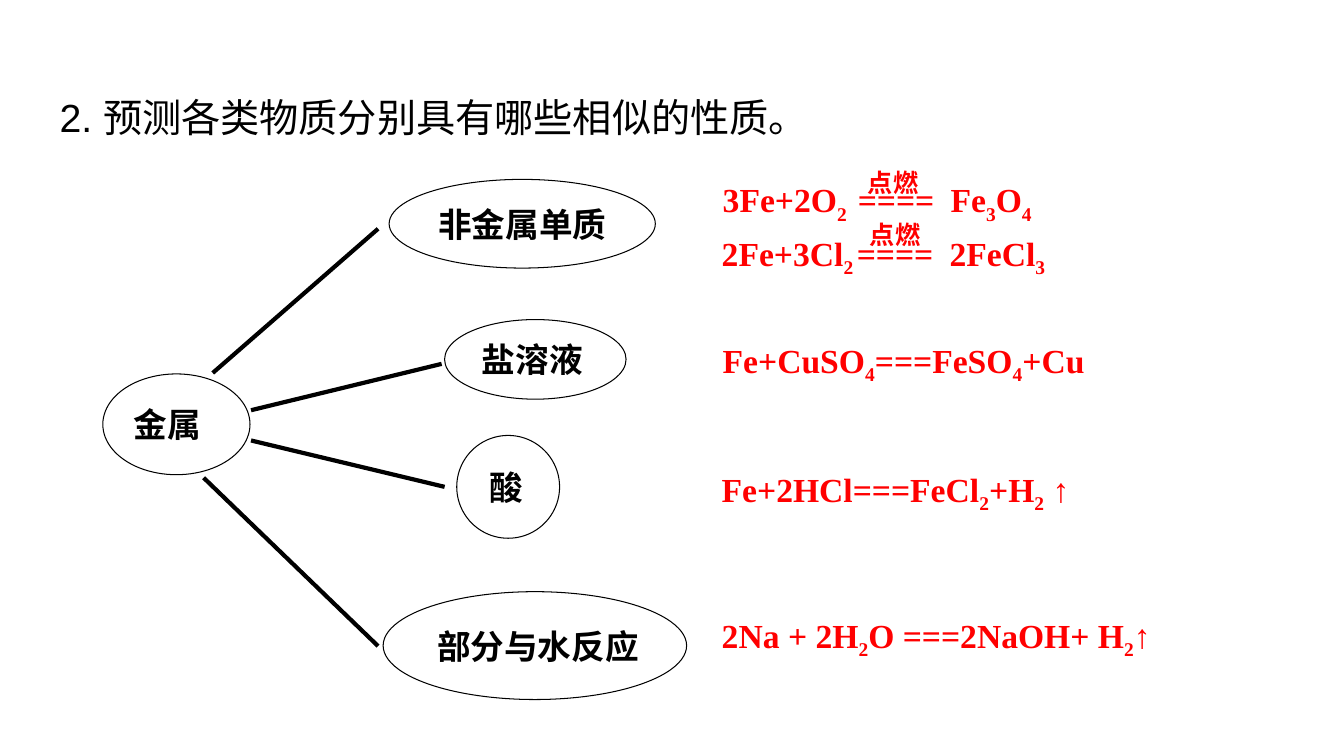
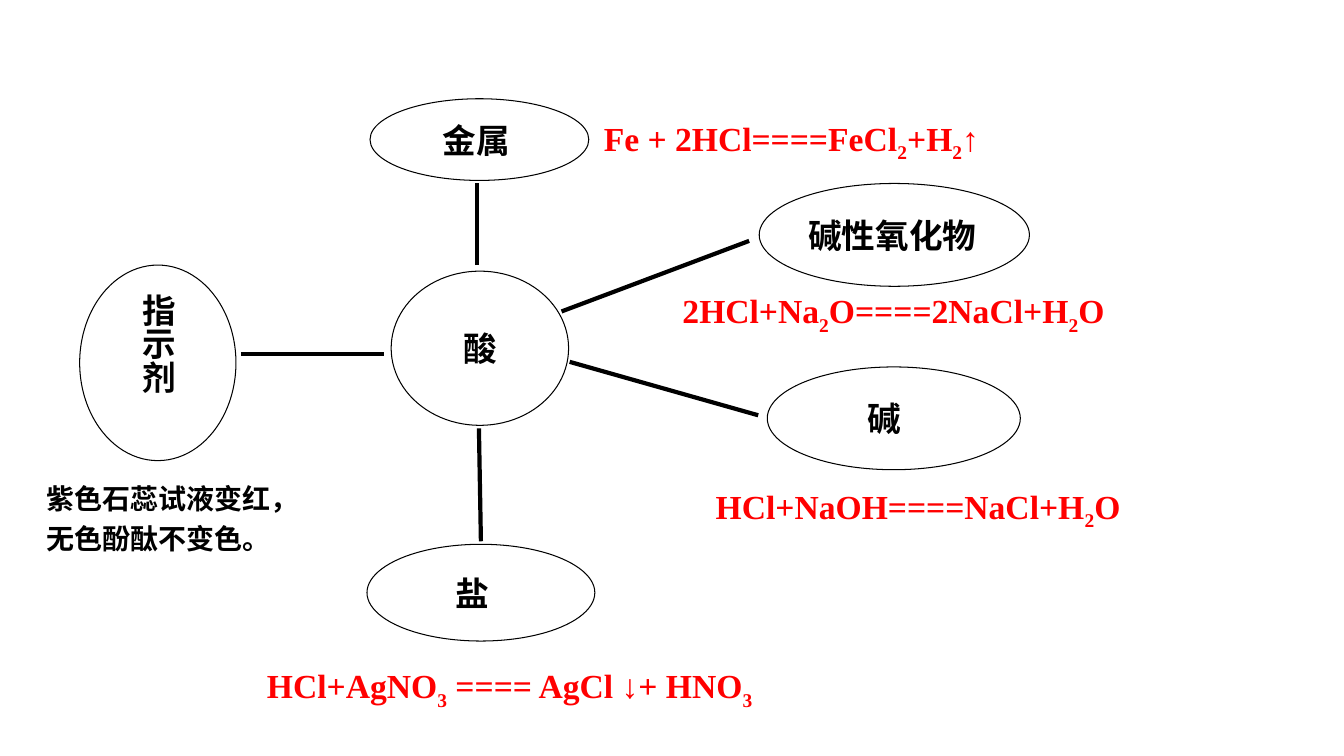
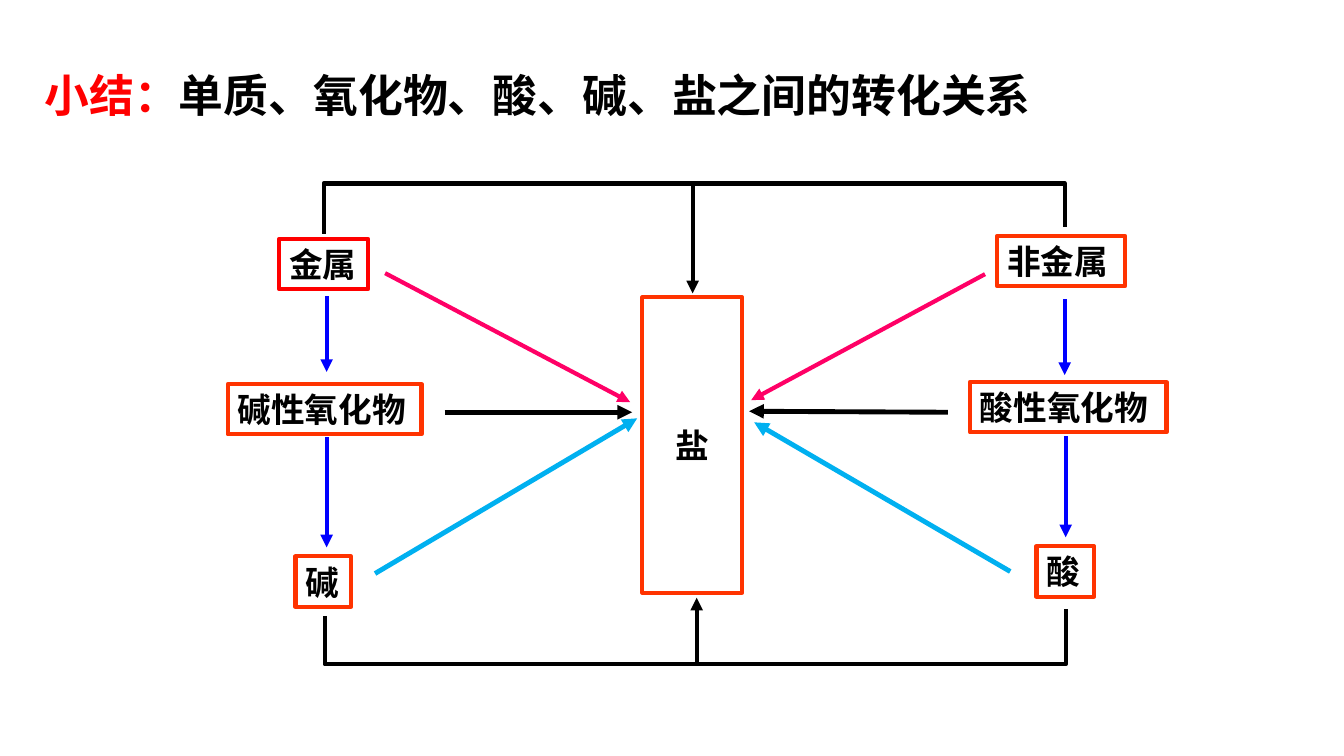
from lxml import etree
from pptx import Presentation
from pptx.dml.color import RGBColor
from pptx.enum import shapes, text
from pptx.oxml import ns
from pptx.util import Inches, Pt

COLORS = {
    "black": "000000",
    "red": "FF0000",
    "orange": "FF3300",
    "blue": "0000FF",
    "pink": "FF0066",
    "sky": "00B0F0",
}
SERIF, SANS, HEADING, CHINESE = "Times New Roman", "Calibri", "Arial", "Noto Sans CJK SC"
TITLE_ONLY, BLANK = 5, 6
REACTION_TABS = (1.34, 2.26)


def rgb(name):
    return RGBColor.from_string(COLORS[name])


def child(parent, tag, **attributes):
    return etree.SubElement(parent, ns.qn(tag), attributes)


def add_span(para, words, size=24, font=SERIF, color="black", bold=True, subscript=False):
    span = para.add_run()
    span.text = words
    span.font.size = Pt(size)
    span.font.bold = bold
    span.font.color.rgb = rgb(color)
    span.font.name = font
    properties = span.font._element
    child(properties, "a:ea", typeface=CHINESE)
    if subscript:
        properties.set("baseline", "-25000")


def set_margins(frame, left, top, right, bottom):
    frame.margin_left, frame.margin_top = Inches(left), Inches(top)
    frame.margin_right, frame.margin_bottom = Inches(right), Inches(bottom)


def place_title(slide, at, spans):
    box = slide.shapes.title
    box.left, box.top, box.width, box.height = map(Inches, at)
    frame = box.text_frame
    frame.auto_size = text.MSO_AUTO_SIZE.NONE
    frame.word_wrap = True
    frame.vertical_anchor = text.MSO_ANCHOR.MIDDLE
    set_margins(frame, 0.1, 0.05, 0.1, 0.05)
    para = frame.paragraphs[0]
    para.alignment = text.PP_ALIGN.LEFT
    for words, style in spans:
        add_span(para, words, **style)


def add_text(slide, left, top, width, height):
    frame = slide.shapes.add_textbox(*map(Inches, (left, top, width, height))).text_frame
    frame.word_wrap = True
    return frame


def add_equation(slide, left, top, width, formula, tabs=()):
    """Write a formula in which an underscore lowers the next character."""
    para = add_text(slide, left, top, width, 0.5).paragraphs[0]
    if tabs:
        stops = child(para._p.get_or_add_pPr(), "a:tabLst")
        for stop in tabs:
            child(stops, "a:tab", pos=str(Inches(stop)), algn="l")
    first, *rest = formula.split("_")
    add_span(para, first, color="red")
    for part in rest:
        add_span(para, part[0], color="red", subscript=True)
        if part[1:]:
            add_span(para, part[1:], color="red")


def add_node(slide, preset, at, line_color, line_width):
    node = slide.shapes.add_shape(preset, *map(Inches, at))
    node.shadow.inherit = False
    node.fill.background()
    node.line.color.rgb = rgb(line_color)
    node.line.width = Pt(line_width)
    node.text_frame.vertical_anchor = text.MSO_ANCHOR.MIDDLE
    return node


def add_oval(slide, at, words, shift=0, font=SERIF, vertical=False):
    """Draw a labelled oval; shift moves the label sideways from the centre."""
    node = add_node(slide, shapes.MSO_SHAPE.OVAL, at, "black", 0.75)
    frame = node.text_frame
    frame.word_wrap = True
    set_margins(frame, max(2 * shift, 0), 0, max(-2 * shift, 0), 0)
    if vertical:
        frame._txBody.bodyPr.set("vert", "eaVert")
    para = frame.paragraphs[0]
    para.alignment = text.PP_ALIGN.CENTER
    add_span(para, words, font=font)


def add_box(slide, at, words, color="orange", align=text.PP_ALIGN.LEFT):
    node = add_node(slide, shapes.MSO_SHAPE.RECTANGLE, at, color, 3)
    node.text_frame.word_wrap = False
    para = node.text_frame.paragraphs[0]
    para.alignment = align
    add_span(para, words, font=SANS)


def add_line(slide, start, end, color="black", width=3, arrow=False):
    line = slide.shapes.add_connector(
        shapes.MSO_CONNECTOR.STRAIGHT, *map(Inches, (*start, *end)))
    line.line.color.rgb = rgb(color)
    line.line.width = Pt(width)
    if arrow:
        child(line.line._get_or_add_ln(), "a:tailEnd", type="triangle")
    child(line._element.spPr, "a:effectLst")


def add_bracket(slide, points):
    start, *rest = [(Inches(x), Inches(y)) for x, y in points]
    builder = slide.shapes.build_freeform(*start)
    builder.add_line_segments(rest, close=False)
    bracket = builder.convert_to_shape()
    bracket.shadow.inherit = False
    bracket.fill.background()
    bracket.line.color.rgb = rgb("black")
    bracket.line.width = Pt(3)


def new_slide(deck, layout):
    return deck.slides.add_slide(deck.slide_layouts[layout])


def metal_slide(deck):
    slide = new_slide(deck, TITLE_ONLY)
    place_title(slide, (0.49, 0.87, 10.72, 0.57), [
        ("2. 预测各类物质分别具有哪些相似的性质。",
         {"size": 28, "font": HEADING, "bold": False})])
    add_oval(slide, (1.02, 3.71, 1.46, 1), "金属", -0.09)
    add_oval(slide, (3.86, 1.78, 2.64, 0.88), "非金属单质")
    add_oval(slide, (4.41, 3.17, 1.8, 0.79), "盐溶液", -0.03)
    add_oval(slide, (4.53, 4.32, 1.02, 1.02), "酸", -0.02)
    add_oval(slide, (3.8, 5.87, 3.01, 1.07), "部分与水反应", 0.03, font=SANS)
    for start, end in (
        ((2.11, 3.7), (3.75, 2.27)),
        ((2.49, 4.07), (4.38, 3.61)),
        ((2.49, 4.37), (4.41, 4.83)),
        ((2.02, 4.74), (3.75, 6.41)),
    ):
        add_line(slide, start, end)
    add_equation(slide, 7.07, 1.73, 4.9, "3Fe+2O_2\t====\tFe_3O_4", REACTION_TABS)
    add_equation(slide, 7.06, 2.26, 4.9, "2Fe+3Cl_2\t====\t2FeCl_3", REACTION_TABS)
    add_equation(slide, 7.07, 3.32, 5.46, "Fe+CuSO_4===FeSO_4+Cu")
    add_equation(slide, 7.06, 4.6, 5.49, "Fe+2HCl===FeCl_2+H_2 ↑")
    add_equation(slide, 7.06, 6.05, 4.91, "2Na + 2H_2O ===2NaOH+ H_2↑")
    for left, top in ((8.51, 1.61), (8.53, 2.13)):
        condition = add_text(slide, left, top, 1.6, 0.4)
        add_span(condition.paragraphs[0], "点燃", size=18, color="red")


def acid_slide(deck):
    slide = new_slide(deck, BLANK)
    add_oval(slide, (3.88, 2.69, 1.76, 1.53), "酸")
    add_oval(slide, (3.67, 0.98, 2.17, 0.81), "金属", -0.03)
    add_oval(slide, (7.53, 1.82, 2.68, 1.02), "碱性氧化物", -0.02)
    add_oval(slide, (7.61, 3.64, 2.51, 1.02), "碱", -0.09)
    add_oval(slide, (3.64, 5.4, 2.26, 0.96), "盐", -0.09)
    add_oval(slide, (0.79, 2.63, 1.55, 1.94), "指示剂", font=CHINESE, vertical=True)
    for start, end in (
        ((4.73, 2.63), (4.73, 1.82)),
        ((5.57, 3.09), (7.43, 2.39)),
        ((5.65, 3.59), (7.52, 4.12)),
        ((4.75, 4.25), (4.77, 5.37)),
        ((2.39, 3.51), (3.81, 3.51)),
    ):
        add_line(slide, start, end)
    add_equation(slide, 5.89, 1.12, 5.56, "Fe + 2HCl====FeCl_2+H_2↑")
    add_equation(slide, 6.67, 2.83, 4.72, "2HCl+Na_2O====2NaCl+H_2O")
    add_equation(slide, 7, 4.77, 4.38, "HCl+NaOH====NaCl+H_2O")
    add_equation(slide, 2.55, 6.55, 7.57, "HCl+AgNO_3 ==== AgCl ↓+ HNO_3")
    note = add_text(slide, 0.36, 4.66, 2.55, 0.91)
    note.word_wrap = False
    for para, words in (
        (note.paragraphs[0], "紫色石蕊试液变红，"),
        (note.add_paragraph(), "无色酚酞不变色。"),
    ):
        para.line_spacing = 1.2
        add_span(para, words, size=20)


def summary_slide(deck):
    slide = new_slide(deck, TITLE_ONLY)
    place_title(slide, (0.34, 0.66, 10.91, 0.56), [
        ("小结：", {"size": 32, "font": SANS, "color": "red"}),
        ("单质、氧化物、酸、碱、盐之间的转化关系", {"size": 32, "font": SANS})])
    add_box(slide, (2.77, 2.37, 0.88, 0.5), "金属", "red")
    add_box(slide, (2.26, 3.81, 1.92, 0.5), "碱性氧化物")
    add_box(slide, (2.93, 5.52, 0.55, 0.5), "碱")
    add_box(slide, (9.89, 2.34, 1.27, 0.5), "非金属")
    add_box(slide, (9.62, 3.79, 1.95, 0.5), "酸性氧化物")
    add_box(slide, (10.28, 5.42, 0.57, 0.5), "酸")
    add_box(slide, (6.37, 2.95, 0.99, 2.93), "盐", align=text.PP_ALIGN.CENTER)
    add_bracket(slide, ((3.21, 2.32), (3.21, 1.82), (10.56, 1.82), (10.56, 2.25)))
    add_bracket(slide, ((3.22, 6.11), (3.22, 6.59), (10.57, 6.59), (10.57, 6.04)))
    for start, end, color, width in (
        ((6.87, 1.8), (6.87, 2.91), "black", 3),
        ((6.91, 6.58), (6.91, 5.93), "black", 3),
        ((3.24, 2.94), (3.24, 3.69), "blue", 3),
        ((3.24, 4.34), (3.24, 5.43), "blue", 3),
        ((10.56, 2.97), (10.56, 3.72), "blue", 3),
        ((10.57, 4.33), (10.57, 5.33), "blue", 3),
        ((3.82, 2.71), (6.25, 3.99), "pink", 3),
        ((9.77, 2.72), (7.45, 3.97), "pink", 3),
        ((3.72, 5.69), (6.32, 4.15), "sky", 3.5),
        ((10.02, 5.67), (7.48, 4.19), "sky", 3.5),
        ((4.41, 4.09), (6.27, 4.09), "black", 3.5),
        ((9.4, 4.09), (7.43, 4.08), "black", 3.5),
    ):
        add_line(slide, start, end, color, width, arrow=True)


def main():
    deck = Presentation()
    deck.slide_width, deck.slide_height = Inches(13.33), Inches(7.5)
    metal_slide(deck)
    acid_slide(deck)
    summary_slide(deck)
    deck.save("out.pptx")


if __name__ == "__main__":
    main()
